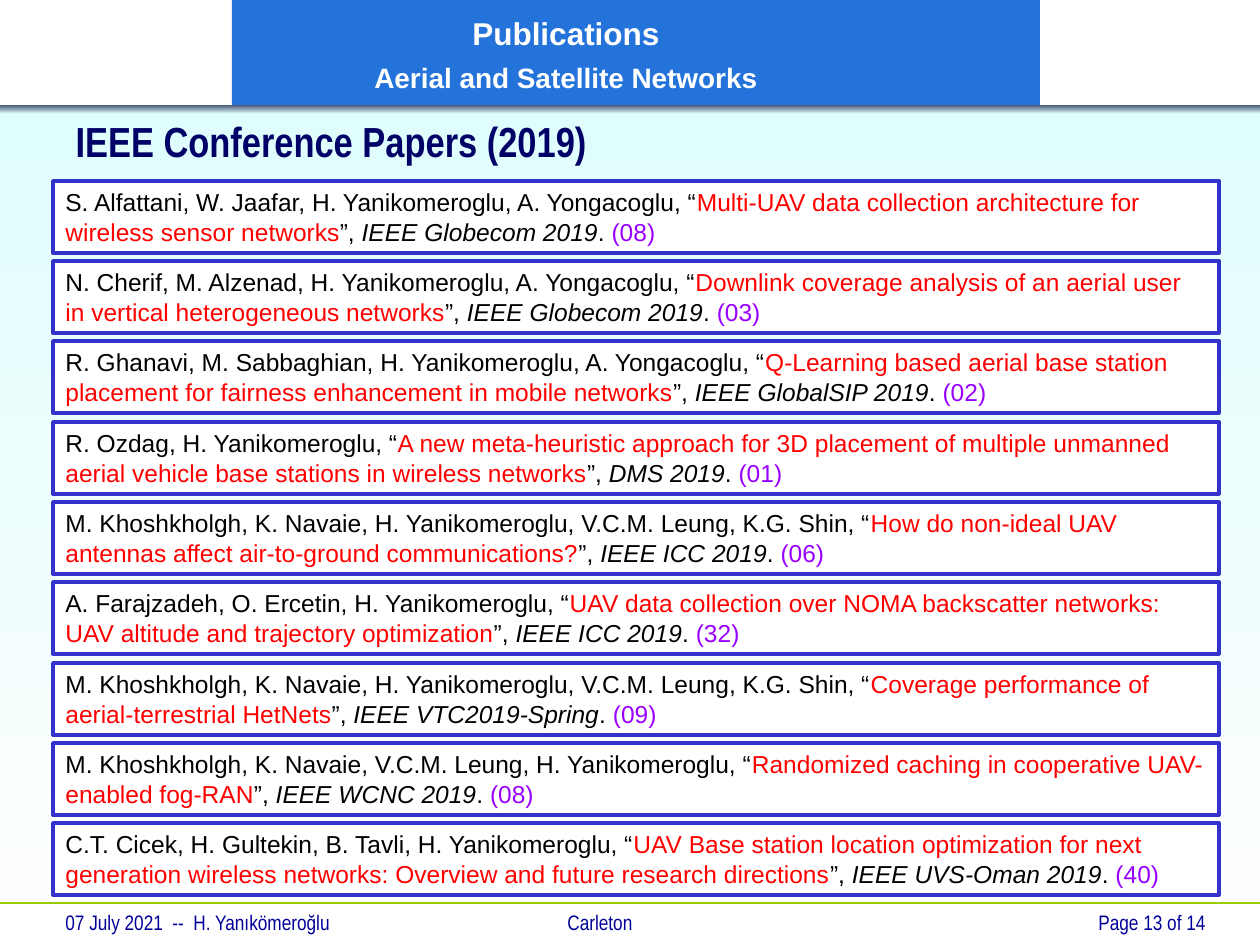
from lxml.etree import SubElement
from pptx import Presentation
from pptx.dml.color import RGBColor
from pptx.enum.shapes import MSO_CONNECTOR, MSO_SHAPE
from pptx.enum.text import MSO_ANCHOR, PP_ALIGN
from pptx.oxml.ns import qn
from pptx.util import Inches, Pt

PX = Inches(1) / 126
COLORS = {
    "sky": "DFFDFD", "white": "FFFFFF", "slate": "475577", "banner": "2473DB",
    "rule": "99CC00", "footer": "000099", "title": "000066", "border": "3333CC",
    "black": "000000", "paper": "FF0000", "count": "9900FF",
}


def write(paragraph, text, size=14, color="black", font="Arial", bold=False, italic=False):
    span = paragraph.add_run()
    span.text = text
    span.font.size = Pt(size)
    span.font.name = font
    span.font.bold = bold
    span.font.italic = italic
    span.font.color.rgb = RGBColor.from_string(COLORS[color])


def add_box(left, top, width, height, fill, line=None):
    box = page.shapes.add_shape(
        MSO_SHAPE.RECTANGLE, *(round(n * PX) for n in (left, top, width, height)))
    box.shadow.inherit = False
    if isinstance(fill, tuple):
        box.fill.gradient()
        box.fill.gradient_angle = 270
        for stop, name, position in zip(box.fill.gradient_stops, fill, (0, 1)):
            stop.color.rgb = RGBColor.from_string(COLORS[name])
            stop.position = position
    else:
        box.fill.solid()
        box.fill.fore_color.rgb = RGBColor.from_string(COLORS[fill])
    if line:
        box.line.color.rgb = RGBColor.from_string(COLORS[line])
        box.line.width = Pt(2)
    else:
        box.line.fill.background()
    return box


deck = Presentation()
deck.slide_width, deck.slide_height = Inches(10), Inches(7.5)
page = deck.slides.add_slide(deck.slide_layouts[5])

add_box(0, 108, 1260, 838, ("sky", "white"))

footer_rule = page.shapes.add_connector(
    MSO_CONNECTOR.STRAIGHT, 0, round(903 * PX), round(1260 * PX), round(903 * PX))
footer_rule.line.color.rgb = RGBColor.from_string(COLORS["rule"])
footer_rule.line.width = Pt(0.75)
SubElement(footer_rule._element.spPr, qn("a:effectLst"))

footers = [
    (53, 788, PP_ALIGN.LEFT, "07 July 2021  --  H. Yanıkömeroğlu\tCarleton"),
    (945, 273, PP_ALIGN.RIGHT, "Page 13 of 14"),
]
for left, width, alignment, text in footers:
    footer = page.shapes.add_textbox(
        round(left * PX), round(903 * PX), round(width * PX), round(36 * PX))
    footer.text_frame.word_wrap = True
    paragraph = footer.text_frame.paragraphs[0]
    paragraph.alignment = alignment
    if "\t" in text:
        tabs = SubElement(paragraph._p.get_or_add_pPr(), qn("a:tabLst"))
        SubElement(tabs, qn("a:tab"), pos=str(round(502 * PX)), algn="l")
    write(paragraph, text, size=12, color="footer", font="Arial Narrow")

add_box(0, 105, 1260, 9, ("slate", "sky"))

banner = add_box(232, 0, 808, 105, "banner").text_frame
banner.word_wrap = True
banner.vertical_anchor = MSO_ANCHOR.MIDDLE
banner.margin_left, banner.margin_right = 0, round(140 * PX)
headings = [("Publications", 18, 0), ("Aerial and Satellite Networks", 16, 3)]
for index, (text, size, gap) in enumerate(headings):
    paragraph = banner.add_paragraph() if index else banner.paragraphs[0]
    paragraph.alignment = PP_ALIGN.CENTER
    paragraph.line_spacing = 1.1
    paragraph.space_before = Pt(gap)
    write(paragraph, text, size=size, color="white", bold=True)

title = page.shapes.title
title.left, title.top = round(63 * PX), round(114 * PX)
title.width, title.height = round(1081 * PX), round(53 * PX)
title.text_frame.vertical_anchor = MSO_ANCHOR.MIDDLE
title.text_frame.paragraphs[0].alignment = PP_ALIGN.LEFT
write(title.text_frame.paragraphs[0], "IEEE Conference Papers (2019)",
      size=24, color="title", font="Arial Narrow", bold=True)
page.shapes._spTree.append(title._element)

papers = [
    ("S. Alfattani, W. Jaafar, H. Yanikomeroglu, A. Yongacoglu",
     "Multi-UAV data collection architecture for wireless sensor networks",
     "IEEE Globecom 2019", "08"),
    ("N. Cherif, M. Alzenad, H. Yanikomeroglu, A. Yongacoglu",
     "Downlink coverage analysis of an aerial user in vertical heterogeneous networks",
     "IEEE Globecom 2019", "03"),
    ("R. Ghanavi, M. Sabbaghian, H. Yanikomeroglu, A. Yongacoglu",
     "Q-Learning based aerial base station placement for fairness enhancement in mobile networks",
     "IEEE GlobalSIP 2019", "02"),
    ("R. Ozdag, H. Yanikomeroglu",
     "A new meta-heuristic approach for 3D placement of multiple unmanned aerial vehicle "
     "base stations in wireless networks",
     "DMS 2019", "01"),
    ("M. Khoshkholgh, K. Navaie, H. Yanikomeroglu, V.C.M. Leung, K.G. Shin",
     "How do non-ideal UAV antennas affect air-to-ground communications?",
     "IEEE ICC 2019", "06"),
    ("A. Farajzadeh, O. Ercetin, H. Yanikomeroglu",
     "UAV data collection over NOMA backscatter networks: UAV altitude and trajectory optimization",
     "IEEE ICC 2019", "32"),
    ("M. Khoshkholgh, K. Navaie, H. Yanikomeroglu, V.C.M. Leung, K.G. Shin",
     "Coverage performance of aerial-terrestrial HetNets",
     "IEEE VTC2019-Spring", "09"),
    ("M. Khoshkholgh, K. Navaie, V.C.M. Leung, H. Yanikomeroglu",
     "Randomized caching in cooperative UAV-enabled fog-RAN",
     "IEEE WCNC 2019", "08"),
    ("C.T. Cicek, H. Gultekin, B. Tavli, H. Yanikomeroglu",
     "UAV Base station location optimization for next generation wireless networks: "
     "Overview and future research directions",
     "IEEE UVS-Oman 2019", "40"),
]
first_top, last_top = 181, 823
for index, (authors, name, venue, count) in enumerate(papers):
    top = first_top + round(index * (last_top - first_top) / (len(papers) - 1))
    frame = add_box(53, top, 1166, 72, "white", line="border").text_frame
    frame.word_wrap = True
    frame.vertical_anchor = MSO_ANCHOR.TOP
    paragraph = frame.paragraphs[0]
    paragraph.alignment = PP_ALIGN.LEFT
    write(paragraph, f"{authors}, “")
    write(paragraph, name, color="paper")
    write(paragraph, "”, ")
    write(paragraph, venue, italic=True)
    write(paragraph, ". ")
    write(paragraph, f"({count})", color="count")

deck.save("out.pptx")
